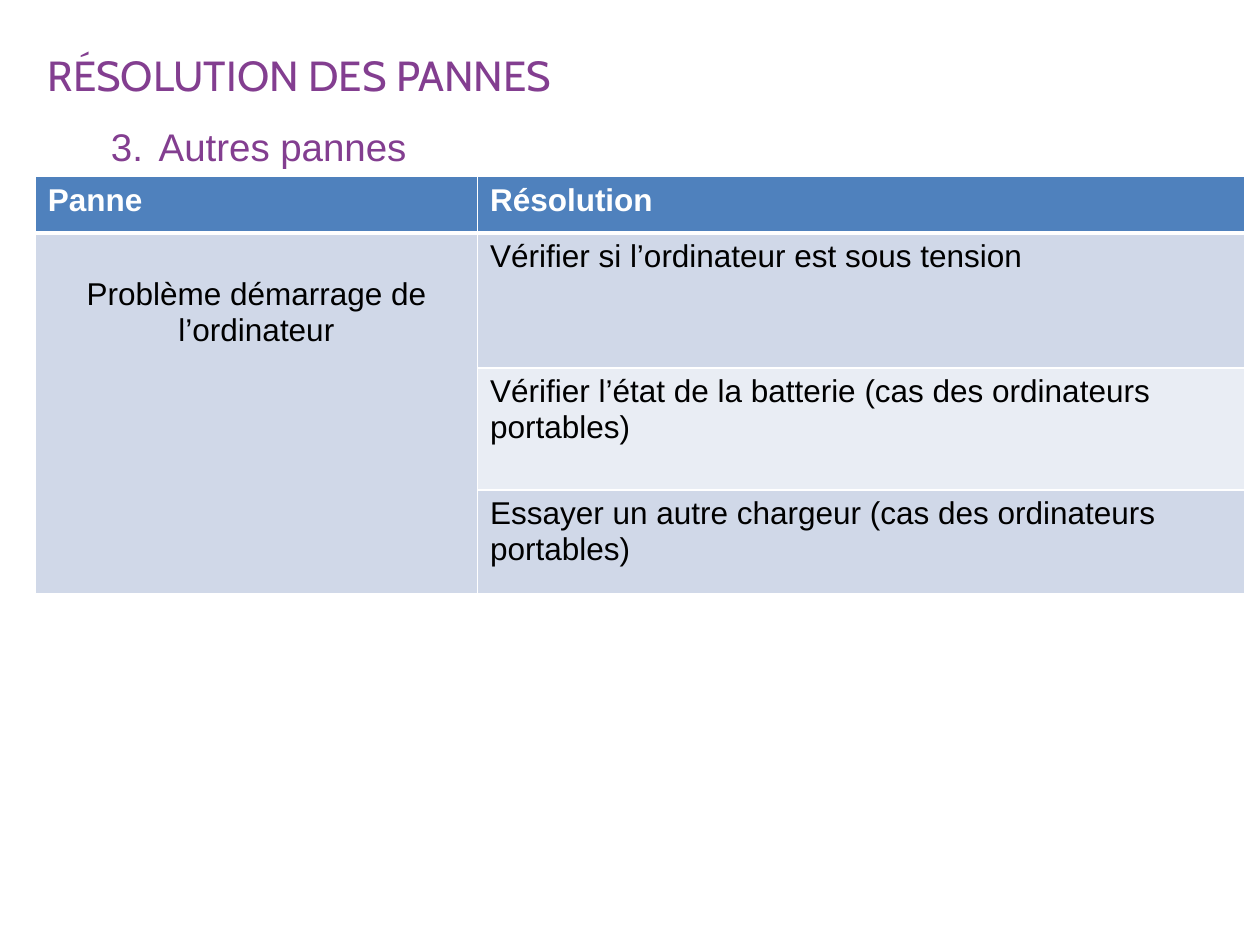
from lxml import etree
from pptx import Presentation
from pptx import util as u
from pptx.dml.color import RGBColor
from pptx.enum import text
from pptx.oxml.ns import qn

HUES = {"plum": "833E90", "head": "4F81BD", "dark": "D0D8E8",
        "light": "E9EDF4", "white": "FFFFFF", "black": "000000"}
HEADS = ["Panne", "Résolution"]
FAULT = "Problème démarrage de l’ordinateur"
FIXES = ["Vérifier si l’ordinateur est sous tension",
         "Vérifier l’état de la batterie (cas des ordinateurs portables)",
         "Essayer un autre chargeur (cas des ordinateurs portables)"]
COLS = [3.51, 6.09]
ROWS = [0.45, 1.07, 0.97, 0.82]


def hue(name):
    return RGBColor.from_string(HUES[name])


def write(para, words, size=18, face="Arial", color="black", bold=False,
          align=text.PP_ALIGN.LEFT, space=None):
    para.alignment = align
    if space:
        para.line_spacing = space
    run = para.add_run()
    run.text = words
    font = run.font
    font.size, font.name, font.bold = u.Pt(size), face, bold
    font.color.rgb = hue(color)


def number(para, start, left, hang):
    props = para._p.get_or_add_pPr()
    props.set("marL", str(u.Inches(left)))
    props.set("indent", str(-u.Inches(hang)))
    etree.SubElement(props, qn("a:buFont"), typeface="Arial")
    etree.SubElement(props, qn("a:buAutoNum"), type="arabicPeriod",
                     startAt=str(start))


def edge(cell, base):
    props = cell._tc.get_or_add_tcPr()
    widths = {"lnL": 1, "lnR": 1, "lnT": 1, "lnB": base}
    for spot, (tag, width) in enumerate(widths.items()):
        line = etree.Element(qn("a:" + tag), w=str(u.Pt(width)))
        fill = etree.SubElement(line, qn("a:solidFill"))
        etree.SubElement(fill, qn("a:srgbClr"), val=HUES["white"])
        props.insert(spot, line)


def add_title(slide, x, y, w, h):
    title = slide.shapes.title
    title.left, title.top = u.Inches(x), u.Inches(y)
    title.width, title.height = u.Inches(w), u.Inches(h)
    frame = title.text_frame
    frame.word_wrap = True
    frame.auto_size = text.MSO_AUTO_SIZE.NONE
    frame.vertical_anchor = text.MSO_ANCHOR.TOP
    write(frame.paragraphs[0], "RÉSOLUTION DES PANNES", size=24,
          face="Cabin", color="plum", space=1.5)
    item = frame.add_paragraph()
    item.level = 1
    number(item, 3, 0.88, 0.38)
    write(item, "Autres pannes", size=22, color="plum", space=1.5)


def add_faults(slide, x, y, w, h):
    table = slide.shapes.add_table(
        len(ROWS), len(COLS), u.Inches(x), u.Inches(y),
        u.Inches(w), u.Inches(h)).table
    for col, width in zip(table.columns, COLS):
        col.width = u.Inches(width)
    for row, height in zip(table.rows, ROWS):
        row.height = u.Inches(height)
    for r in range(len(ROWS)):
        for c in range(len(COLS)):
            cell = table.cell(r, c)
            cell.fill.solid()
            shade = "head" if r == 0 else "dark" if c == 0 or r % 2 else "light"
            cell.fill.fore_color.rgb = hue(shade)
            edge(cell, 3 if r == 0 else 1)
    for c, words in enumerate(HEADS):
        write(table.cell(0, c).text_frame.paragraphs[0], words,
              color="white", bold=True)
    for r, words in enumerate(FIXES, 1):
        write(table.cell(r, 1).text_frame.paragraphs[0], words)
    fault = table.cell(1, 0)
    fault.merge(table.cell(len(FIXES), 0))
    fault.margin_top = u.Inches(0.35)
    write(fault.text_frame.paragraphs[0], FAULT, align=text.PP_ALIGN.CENTER)


def main():
    deck = Presentation()
    deck.slide_width, deck.slide_height = u.Inches(10), u.Inches(7.5)
    slide = deck.slides.add_slide(deck.slide_layouts[5])
    add_title(slide, 0.28, 0.14, 8.03, 0.71)
    add_faults(slide, 0.28, 1.4, sum(COLS), sum(ROWS))
    deck.save("out.pptx")


if __name__ == "__main__":
    main()
